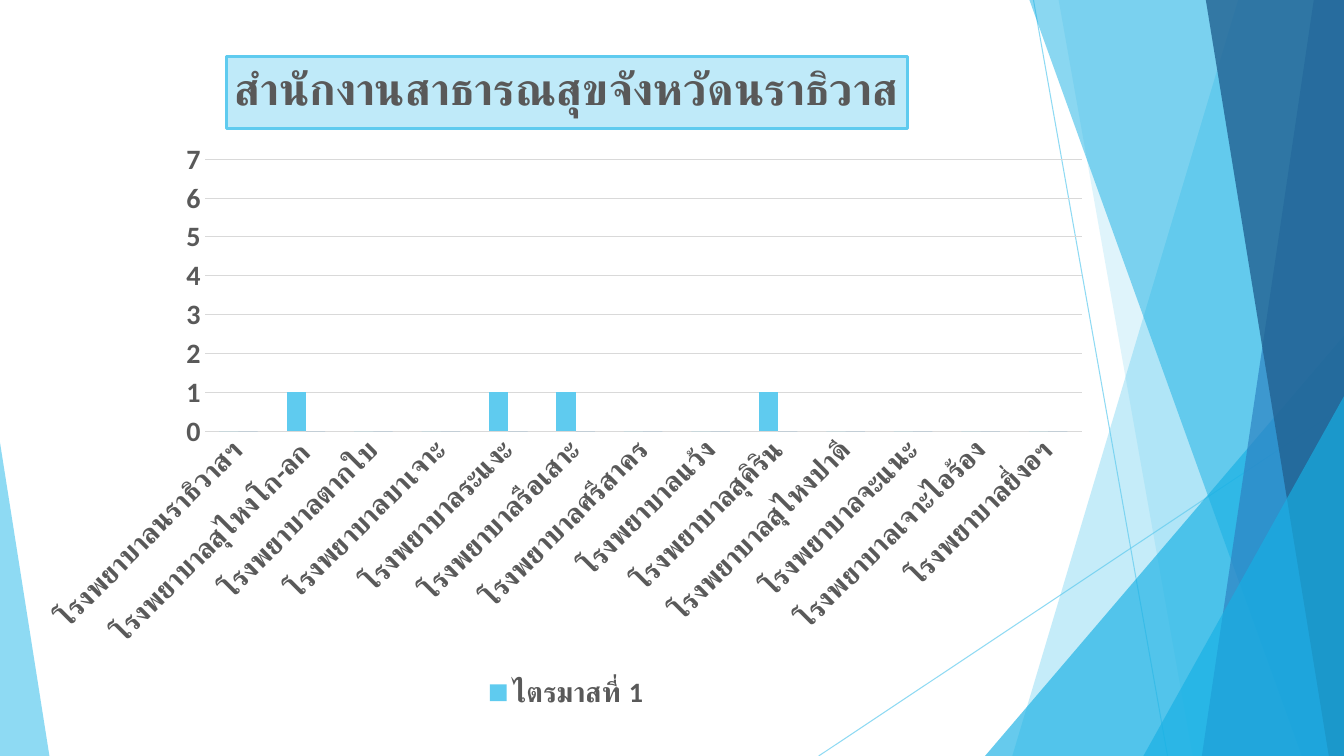
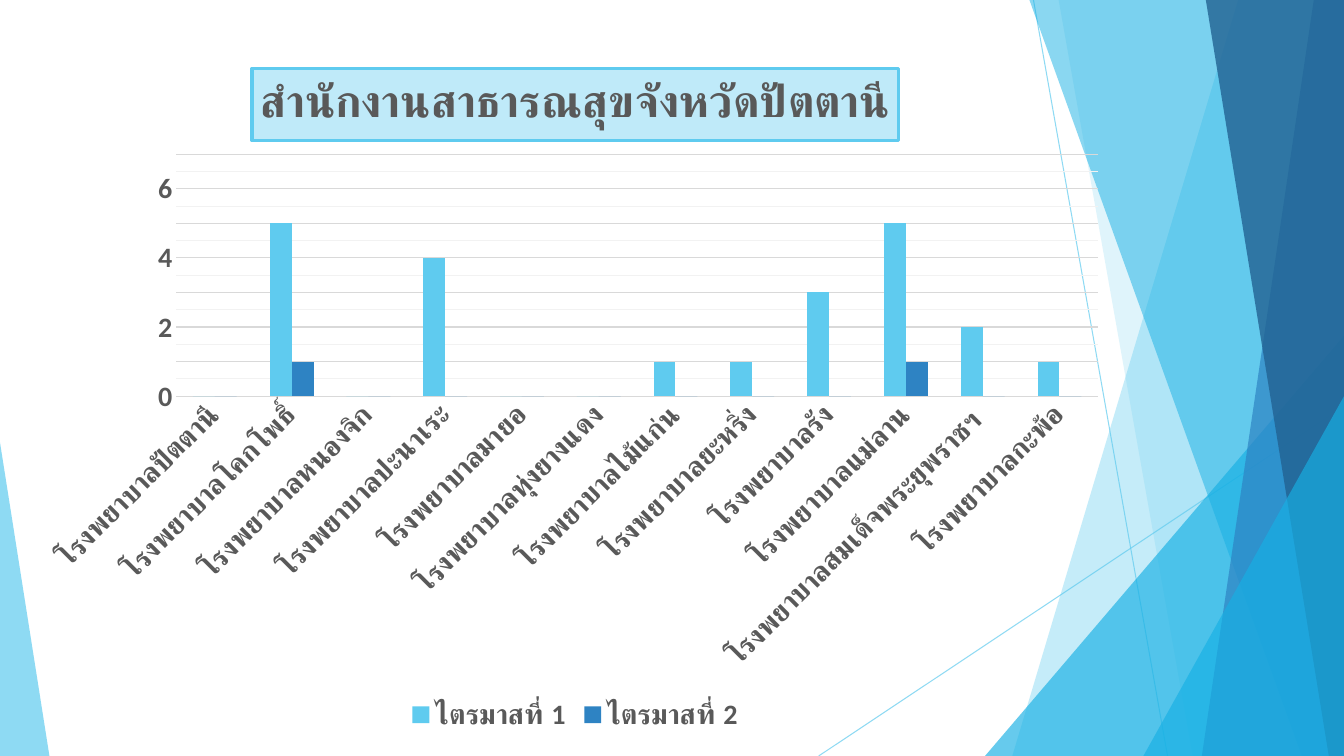
import pptx
import pptx.chart.data
import pptx.dml.color
import pptx.enum.chart
import pptx.enum.shapes
import pptx.oxml
import pptx.oxml.ns
import pptx.util

Inches, Pt = pptx.util.Inches, pptx.util.Pt
qn = pptx.oxml.ns.qn

WIDTH, HEIGHT = 13.33, 7.5
FONT = "Calibri"
SKY, AZURE, BLUE, NAVY = "5FCBEF", "17B0E4", "2E83C3", "226292"
PALE_SKY, TEXT, GRID, MINOR_GRID = "BFEAF9", "595959", "D9D9D9", "F2F2F2"

QUARTERS = ("ไตรมาสที่ 1", "ไตรมาสที่ 2")
HOSPITAL = "โรงพยาบาล"

RAYS = [((10.25, 0), (11.58, HEIGHT)), ((WIDTH, 4.03), (8.12, HEIGHT))]
# Panels: left edge at the top, left edge at the bottom, colour, opacity
# Triangles: left, top, width, apex (0 left, 1 right), colour, opacity
FACETS = [
    ("panel", 12.28, 10.04, SKY, 36),
    ("panel", 10.5, 11.83, SKY, 20),
    ("triangle", 9.77, 3.33, 3.56, 1, AZURE, 66),
    ("panel", 10.21, 12.91, AZURE, 50),
    ("panel", 13.03, 11.92, BLUE, 70),
    ("panel", 11.96, 13.18, NAVY, 80),
    ("triangle", 11.34, 3.93, 1.99, 1, AZURE, 66),
    ("triangle", 0, 4.39, 0.49, 0, SKY, 70),
]

# Boxes are left, top, width, height; the plot box is relative to the chart box
CHARTS = [
    {
        "title": "สำนักงานสาธารณสุขจังหวัดนราธิวาส",
        "box": (0.3, 0.37, 10.64, 6.73),
        "plot": (1.73, 1.21, 8.7, 2.7),
        "names": ["นราธิวาสฯ", "สุไหงโก-ลก", "ตากใบ", "บาเจาะ", "ระแงะ", "รือเสาะ",
                  "ศรีสาคร", "แว้ง", "สุคิริน", "สุไหงปาดี", "จะแนะ", "เจาะไอร้อง",
                  "ยี่งอฯ"],
        "values": [(0, 1, 0, 0, 1, 1, 0, 0, 1, 0, 0, 0, 0), (0,) * 13],
        "minor_grid": False,
    },
    {
        "title": "สำนักงานสาธารณสุขจังหวัดปัตตานี",
        "box": (0.3, 0.49, 10.81, 6.83),
        "plot": (1.45, 1.04, 9.14, 2.4),
        "names": ["ปัตตานี", "โคกโพธิ์", "หนองจิก", "ปะนาเระ", "มายอ", "ทุ่งยางแดง",
                  "ไม้แก่น", "ยะหริ่ง", "รัง", "แม่ลาน", "สมเด็จพระยุพราชฯ ", "กะพ้อ"],
        "values": [(0, 5, 0, 4, 0, 0, 1, 1, 3, 5, 2, 1),
                   (0, 1, 0, 0, 0, 0, 0, 0, 0, 1, 0, 0)],
        "minor_grid": True,
    },
]


def set_color(fill, color, opacity=100):
    fill.solid()
    fill.fore_color.rgb = pptx.dml.color.RGBColor.from_string(color)
    if opacity < 100:
        parent = fill.fore_color._xFill
        alpha = pptx.oxml.parse_xml(
            f'<a:alpha {pptx.oxml.ns.nsdecls("a")} val="{opacity * 1000}"/>')
        parent.find(qn("a:srgbClr")).append(alpha)


def format_font(font, size):
    for name, value in {"name": FONT, "size": Pt(size), "bold": True}.items():
        setattr(font, name, value)
    set_color(font.fill, TEXT)


def add_ray(shapes, start, end):
    ray = shapes.add_connector(pptx.enum.shapes.MSO_CONNECTOR.STRAIGHT,
                               *map(Inches, start + end))
    ray.line.width = Pt(0.75)
    set_color(ray.line.fill, SKY, 70)
    properties = ray.element.find(qn("p:spPr"))
    properties.append(pptx.oxml.parse_xml(
        f'<a:effectLst {pptx.oxml.ns.nsdecls("a")}/>'))


def add_panel(shapes, top_left, bottom_left):
    """Add a slanted panel that reaches the right edge of the slide."""
    outline = shapes.build_freeform(Inches(top_left), 0)
    corners = [(WIDTH, 0), (WIDTH, HEIGHT), (bottom_left, HEIGHT)]
    outline.add_line_segments([(Inches(x), Inches(y)) for x, y in corners])
    return outline.convert_to_shape()


def add_triangle(shapes, left, top, width, apex):
    """Add a triangle that stands on the bottom edge of the slide."""
    triangle = shapes.add_shape(
        pptx.enum.shapes.MSO_SHAPE.ISOSCELES_TRIANGLE,
        *map(Inches, (left, top, width, HEIGHT - top)))
    triangle.adjustments[0] = apex
    return triangle


def decorate_layout(layout, slide):
    """Draw the facets as a group and move it to the layout that slides share."""
    group = slide.shapes.add_group_shape()
    for start, end in RAYS:
        add_ray(group.shapes, start, end)
    builders = {"panel": add_panel, "triangle": add_triangle}
    for kind, *place, color, opacity in FACETS:
        facet = builders[kind](group.shapes, *place)
        facet.shadow.inherit = False
        facet.line.fill.background()
        set_color(facet.fill, color, opacity)
    layout.shapes.element.append(group.element)


def place_plot(plot_area, plot_box, chart_box):
    """Fix the inner plot area at a box relative to the chart."""
    for layout in plot_area.findall(qn("c:layout")):
        plot_area.remove(layout)
    left, top, width, height = plot_box
    fractions = {"x": left / chart_box[2], "y": top / chart_box[3],
                 "w": width / chart_box[2], "h": height / chart_box[3]}
    modes = "".join(f'<c:{axis}Mode val="edge"/>' for axis in "xy")
    sizes = "".join(f'<c:{key} val="{value:.4f}"/>' for key, value in fractions.items())
    plot_area.insert(0, pptx.oxml.parse_xml(
        f'<c:layout {pptx.oxml.ns.nsdecls("c")}><c:manualLayout>'
        f'<c:layoutTarget val="inner"/>{modes}{sizes}</c:manualLayout></c:layout>'))


def no_fill():
    return pptx.oxml.parse_xml(
        f'<c:spPr {pptx.oxml.ns.nsdecls("c", "a")}><a:noFill/>'
        '<a:ln><a:noFill/></a:ln></c:spPr>')


def format_title(chart, text):
    chart.has_title = True
    title = chart.chart_title
    title.include_in_layout = False
    title.text_frame.text = text
    format_font(title.text_frame.paragraphs[0].runs[0].font, 32)
    set_color(title.format.fill, PALE_SKY)
    set_color(title.format.line.fill, SKY)
    title.format.line.width = Pt(2.25)


def format_axes(chart, minor_grid):
    for axis in (chart.category_axis, chart.value_axis):
        axis.major_tick_mark = axis.minor_tick_mark = pptx.enum.chart.XL_TICK_MARK.NONE
        axis.format.line.fill.background()
        format_font(axis.tick_labels.font, 20)
    label_body = chart.element.xpath(".//c:catAx/c:txPr/a:bodyPr")[0]
    label_body.set("rot", "-2700000")
    label_body.set("vert", "horz")

    value_axis = chart.value_axis
    scale = {"minimum_scale": 0, "maximum_scale": 7, "major_unit": 1,
             "minor_unit": 0.5, "has_minor_gridlines": minor_grid}
    for name, value in scale.items():
        setattr(value_axis, name, value)
    major_line = value_axis.major_gridlines.format.line
    set_color(major_line.fill, GRID)
    major_line.width = Pt(0.75)
    for gridlines in chart.element.xpath(".//c:valAx/c:minorGridlines"):
        gridlines.append(pptx.oxml.parse_xml(
            f'<c:spPr {pptx.oxml.ns.nsdecls("c", "a")}><a:ln w="{Pt(0.75)}"><a:solidFill>'
            f'<a:srgbClr val="{MINOR_GRID}"/></a:solidFill></a:ln></c:spPr>'))


def format_legend(chart, values):
    """Show the legend below, without the series that are all zero."""
    chart.has_legend = True
    legend = chart.legend
    legend.position = pptx.enum.chart.XL_LEGEND_POSITION.BOTTOM
    legend.include_in_layout = False
    format_font(legend.font, 20)
    position = chart.element.xpath(".//c:legend/c:legendPos")[0]
    for index, series_values in enumerate(values):
        if not any(series_values):
            position.addnext(pptx.oxml.parse_xml(
                f'<c:legendEntry {pptx.oxml.ns.nsdecls("c")}>'
                f'<c:idx val="{index}"/><c:delete val="1"/></c:legendEntry>'))


def add_hospital_chart(slide, title, box, plot, names, values, minor_grid):
    data = pptx.chart.data.CategoryChartData(number_format="General")
    data.categories = [HOSPITAL + name for name in names]
    for quarter, series_values in zip(QUARTERS, values):
        data.add_series(quarter, series_values)
    chart = slide.shapes.add_chart(
        pptx.enum.chart.XL_CHART_TYPE.COLUMN_CLUSTERED, *map(Inches, box), data).chart
    format_font(chart.font, 20)
    format_title(chart, title)
    format_axes(chart, minor_grid)
    format_legend(chart, values)

    columns = chart.plots[0]
    columns.gap_width, columns.overlap = 150, 0
    columns.vary_by_categories = False
    for series, color in zip(columns.series, (SKY, BLUE)):
        set_color(series.format.fill, color)

    plot_area = chart.element.xpath("./c:chart/c:plotArea")[0]
    place_plot(plot_area, plot, box)
    plot_area.append(no_fill())
    chart.element.find(qn("c:chart")).addnext(no_fill())


def main():
    presentation = pptx.Presentation()
    presentation.slide_width = Inches(WIDTH)
    presentation.slide_height = Inches(HEIGHT)
    layout = presentation.slide_layouts[6]
    slides = [presentation.slides.add_slide(layout) for _ in CHARTS]
    decorate_layout(layout, slides[0])
    for slide, chart in zip(slides, CHARTS):
        add_hospital_chart(slide, **chart)
    presentation.save("out.pptx")


if __name__ == "__main__":
    main()
